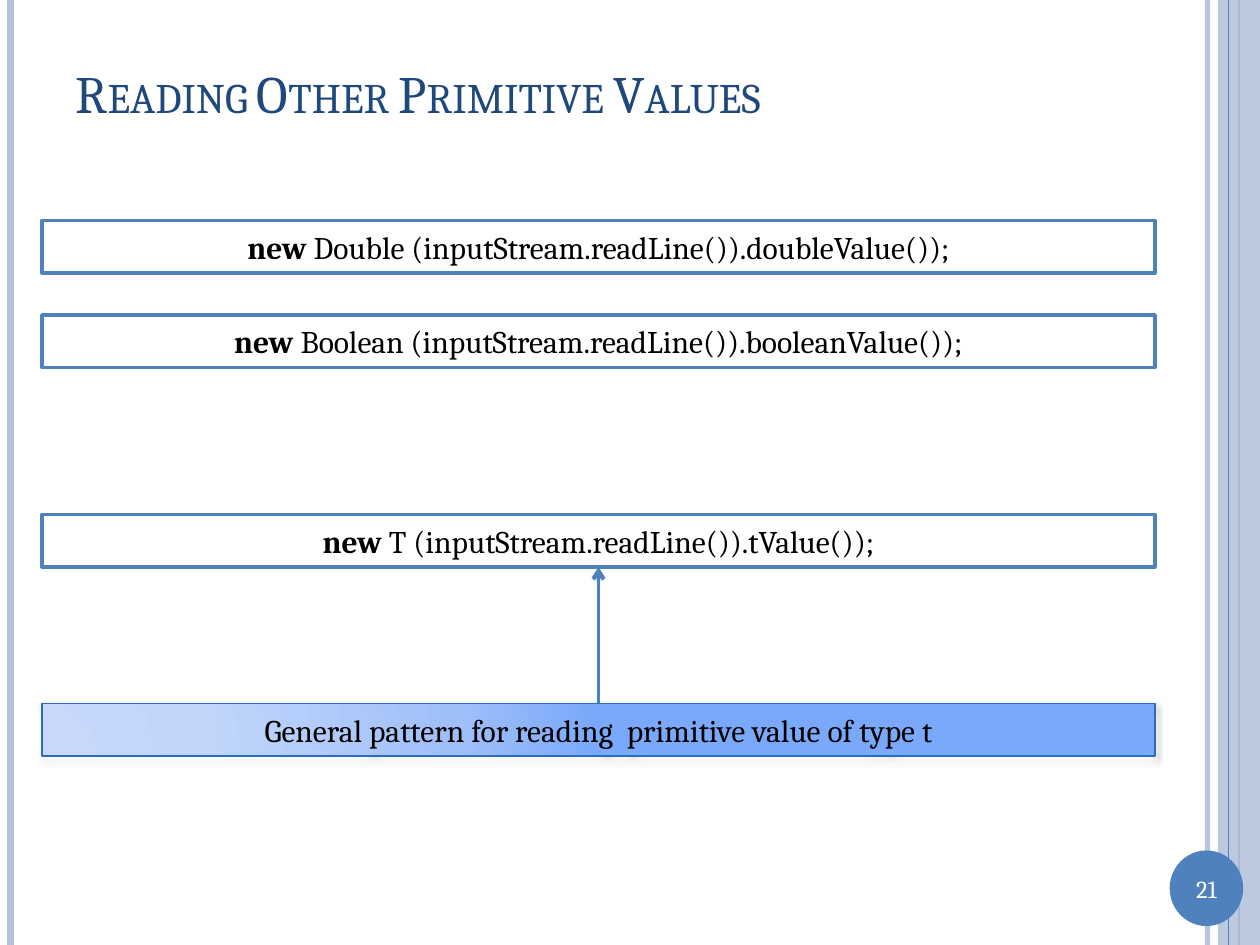
"""Builds the slide on reading other primitive values."""
from lxml import etree
from pptx import Presentation
from pptx import util as u
from pptx.dml.color import RGBColor
from pptx.enum import shapes, text
from pptx.oxml import parse_xml
from pptx.oxml.ns import nsdecls, qn

WHITE = RGBColor(0xFF, 0xFF, 0xFF)
BLACK = RGBColor(0, 0, 0)
NAVY = RGBColor(0x1F, 0x49, 0x7D)
BLUE = RGBColor(0x4F, 0x81, 0xBD)
PALE = RGBColor(0xB3, 0xC1, 0xDB)
EDGE = RGBColor(0x2C, 0x6C, 0xB9)
GLOW = [(0, RGBColor(0xC7, 0xD8, 0xFB)), (30, RGBColor(0xC1, 0xD5, 0xFA)),
        (75, RGBColor(0x9F, 0xBF, 0xF9)), (100, RGBColor(0x7A, 0xA9, 0xFB))]

COLUMNS, ROWS = 120, 90
BOX_LEFT, BOX_WIDTH, BOX_HEIGHT = 4, 106, 5


class SlideBuilder:
    """Holds the style and the current slide, measured on a 120 by 90 grid."""

    font = "Cambria"

    def __init__(self, deck):
        self.deck = deck
        self.slide = deck.slides.add_slide(deck.slide_layouts[5])

    def place(self, column, row):
        return (u.Emu(round(self.deck.slide_width * column / COLUMNS)),
                u.Emu(round(self.deck.slide_height * row / ROWS)))

    def area(self, left, top, width, height):
        return *self.place(left, top), *self.place(width, height)

    def set_words(self, frame, words, size, color, align, keyword=""):
        frame.word_wrap = True
        frame.vertical_anchor = text.MSO_ANCHOR.MIDDLE
        paragraph = frame.paragraphs[0]
        paragraph.alignment = align
        paragraph.font.name = self.font
        paragraph.font.size = u.Pt(size)
        paragraph.font.color.rgb = color
        if keyword:
            paragraph.add_run().text = keyword
            paragraph.runs[0].font.bold = True
        paragraph.add_run().text = words
        return paragraph

    def fade(self, owner, opacity):
        for color in owner.iter(qn("a:srgbClr")):
            etree.SubElement(color, qn("a:alpha")).set("val", str(opacity * 1000))

    def title(self, words, *grid):
        heading = self.slide.shapes.title
        heading.left, heading.top, heading.width, heading.height = self.area(*grid)
        paragraph = self.set_words(heading.text_frame, words, 30, NAVY, text.PP_ALIGN.LEFT)
        paragraph.runs[0]._r.get_or_add_rPr().set("cap", "small")

    def line(self, start, end, color, width, opacity=100, arrow=False):
        stroke = self.slide.shapes.add_connector(
            shapes.MSO_CONNECTOR.STRAIGHT, *self.place(*start), *self.place(*end))
        stroke.line.color.rgb = color
        stroke.line.width = u.Pt(width)
        properties = stroke._element.spPr
        if opacity < 100:
            self.fade(properties, opacity)
        if arrow:
            etree.SubElement(properties.find(qn("a:ln")), qn("a:tailEnd")).set("type", "arrow")
        etree.SubElement(properties, qn("a:effectLst"))

    def panel(self, kind, grid, fill, edge=None, width=0, opacity=100):
        panel = self.slide.shapes.add_shape(kind, *self.area(*grid))
        panel.shadow.inherit = False
        panel.fill.solid()
        panel.fill.fore_color.rgb = fill
        if opacity < 100:
            self.fade(panel._element.spPr, opacity)
        if edge is None:
            panel.line.fill.background()
        else:
            panel.line.color.rgb = edge
            panel.line.width = u.Pt(width)
        return panel

    def box(self, row, words, keyword="", edge=BLUE, width=2):
        box = self.panel(shapes.MSO_SHAPE.RECTANGLE, (BOX_LEFT, row, BOX_WIDTH, BOX_HEIGHT),
                         WHITE, edge, width)
        self.set_words(box.text_frame, words, 18, BLACK, text.PP_ALIGN.CENTER, keyword)
        return box

    def glowing_box(self, row, words):
        properties = self.box(row, words, edge=EDGE, width=1)._element.spPr
        stops = "".join(f'<a:gs pos="{share * 1000}"><a:srgbClr val="{color}"/></a:gs>'
                        for share, color in GLOW)
        gradient = parse_xml(
            f'<a:gradFill {nsdecls("a")} rotWithShape="1"><a:gsLst>{stops}</a:gsLst>'
            '<a:path path="circle"><a:fillToRect l="5000" t="100000" r="120000" b="10000"/>'
            '</a:path></a:gradFill>')
        properties.replace(properties.find(qn("a:solidFill")), gradient)
        properties.find(qn("a:effectLst")).append(parse_xml(
            f'<a:outerShdw {nsdecls("a")} blurRad="{u.Pt(4)}" dist="{u.Pt(2)}" dir="5400000" '
            'rotWithShape="0"><a:srgbClr val="000000"><a:alpha val="40000"/></a:srgbClr>'
            '</a:outerShdw>'))

    def label(self, words, *grid):
        label = self.slide.shapes.add_textbox(*self.area(*grid))
        self.set_words(label.text_frame, words, 14, WHITE, text.PP_ALIGN.CENTER)

    def rail(self, column, color, width, opacity=100):
        self.line((column, 0), (column, ROWS), color, width, opacity)


def main():
    deck = Presentation()
    deck.slide_width, deck.slide_height = u.Inches(10), u.Inches(7.5)
    page = SlideBuilder(deck)

    page.rail(115, PALE, 3, 93)
    page.rail(1, PALE, 4.5)
    page.rail(118, BLUE, 1.5)
    page.panel(shapes.MSO_SHAPE.RECTANGLE, (116, 0, 4, ROWS), PALE, opacity=87)
    page.rail(117, BLUE, 0.75)
    page.panel(shapes.MSO_SHAPE.OVAL, (111.4, 81, 7, 7.2), BLUE)
    page.label("21", 111.4, 82.6, 7, 4)

    page.title("Reading Other Primitive Values", 6, 3.6, 104, 10.4)
    for row, type_name, method in ((21, "Double", "doubleValue"),
                                   (30, "Boolean", "booleanValue"),
                                   (49, "T", "tValue")):
        page.box(row, f" {type_name} (inputStream.readLine()).{method}());", "new")
    page.glowing_box(67, "General pattern for reading  primitive value of type t")
    middle = BOX_LEFT + BOX_WIDTH / 2
    page.line((middle, 67), (middle, 49 + BOX_HEIGHT), BLUE, 2.25, arrow=True)

    deck.save("out.pptx")


if __name__ == "__main__":
    main()
